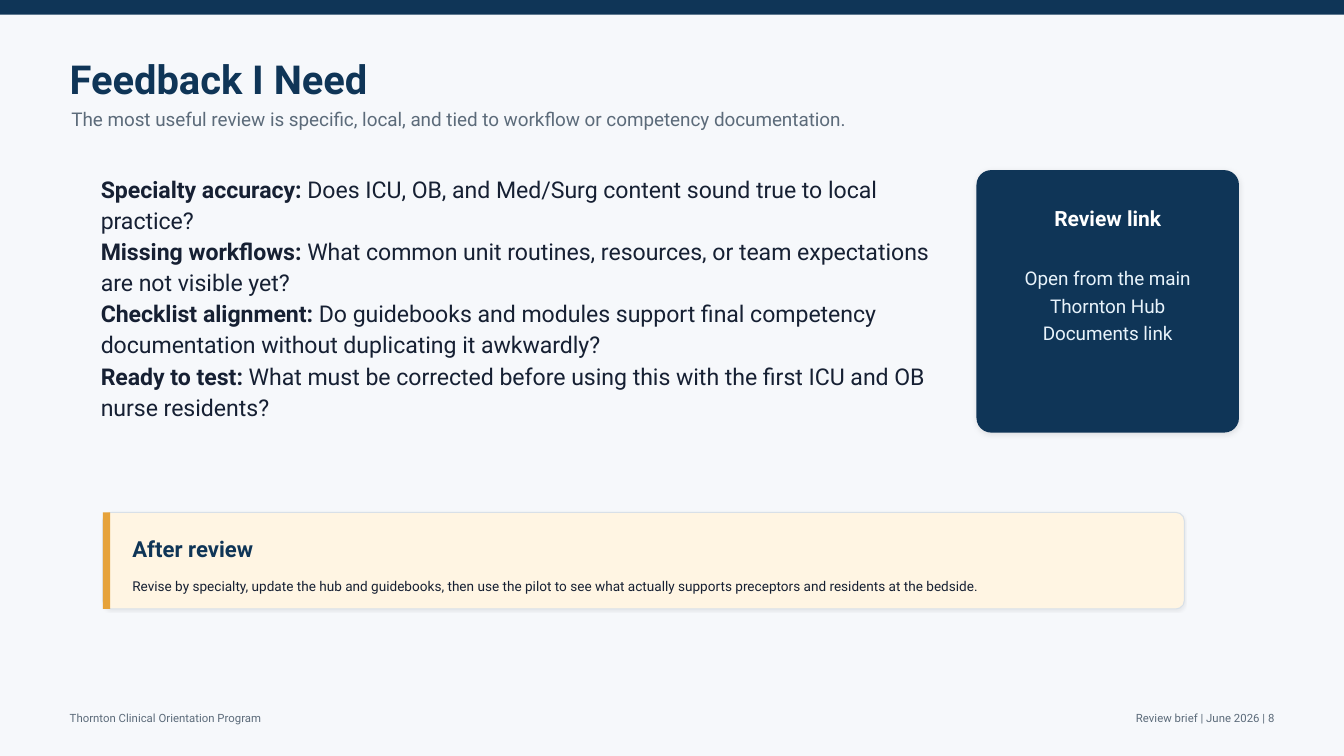
from lxml import etree
from pptx import Presentation
from pptx.dml.color import RGBColor
from pptx.enum.shapes import MSO_SHAPE
from pptx.enum.text import MSO_ANCHOR, PP_ALIGN
from pptx.oxml.ns import qn
from pptx.util import Pt

RECT, ROUND = MSO_SHAPE.RECTANGLE, MSO_SHAPE.ROUNDED_RECTANGLE
LEFT, CENTER, RIGHT = PP_ALIGN.LEFT, PP_ALIGN.CENTER, PP_ALIGN.RIGHT
TOP = MSO_ANCHOR.TOP

FONT = "Roboto"
NAVY = RGBColor(0x0F, 0x35, 0x57)
GRAY = RGBColor(0x5C, 0x6B, 0x7A)
INK = RGBColor(0x16, 0x20, 0x33)
WHITE = RGBColor(0xFF, 0xFF, 0xFF)
ICE = RGBColor(0xE8, 0xF3, 0xFB)
CREAM = RGBColor(0xFF, 0xF5, 0xE3)
AMBER = RGBColor(0xE6, 0xA2, 0x3A)
BORDER = RGBColor(0xD8, 0xE0, 0xE8)
PAPER = RGBColor(0xF6, 0xF8, 0xFB)

# Content
TITLE = "Feedback I Need"
SUBTITLE = ("The most useful review is specific, local, and tied to workflow "
            "or competency documentation.")
QUESTIONS = [
    ("Specialty accuracy: ",
     "Does ICU, OB, and Med/Surg content sound true to local practice?"),
    ("Missing workflows: ",
     "What common unit routines, resources, or team expectations are not visible yet?"),
    ("Checklist alignment: ",
     "Do guidebooks and modules support final competency documentation "
     "without duplicating it awkwardly?"),
    ("Ready to test: ",
     "What must be corrected before using this with the first ICU and OB nurse residents?"),
]
LINK_TITLE = "Review link"
LINK_LINES = ["Open from the main", "Thornton Hub", "Documents link"]
AFTER_TITLE = "After review"
AFTER_TEXT = ("Revise by specialty, update the hub and guidebooks, then use the pilot to see "
              "what actually supports preceptors and residents at the bedside.")
FOOTER_LEFT = "Thornton Clinical Orientation Program"
FOOTER_RIGHT = "Review brief | June 2026 | 8"

# Layout in points
SLIDE_W, SLIDE_H = 960, 540
MARGIN = 46.8
FOOTER_Y, FOOTER_H = 505.5, 13.5
BODY_Y, BODY_H = 121.5, 187.5
LINK_X = 697.5
AFTER_X, AFTER_Y, AFTER_W, AFTER_H = 73.5, 366, 772.5, 69
AFTER_TEXT_X, AFTER_TEXT_W = 91.5, 741

prs = Presentation()
prs.slide_width, prs.slide_height = Pt(SLIDE_W), Pt(SLIDE_H)
slide = prs.slides.add_slide(prs.slide_layouts[6])
slide.background.fill.solid()
slide.background.fill.fore_color.rgb = PAPER


def add_shadow(sp, alpha, blur, dist):
    effects = sp._element.spPr.find(qn("a:effectLst"))
    shadow = etree.SubElement(effects, qn("a:outerShdw"), blurRad=str(Pt(blur)),
                              dist=str(Pt(dist)), dir="5400000", rotWithShape="0")
    color = etree.SubElement(shadow, qn("a:srgbClr"), val="000000")
    etree.SubElement(color, qn("a:alpha"), val=str(alpha * 1000))


def add_box(kind, x, y, w, h, fill, line=None, adj=None, shadow=None):
    sp = slide.shapes.add_shape(kind, Pt(x), Pt(y), Pt(w), Pt(h))
    sp.shadow.inherit = False
    sp.fill.solid()
    sp.fill.fore_color.rgb = fill
    if line is None:
        sp.line.fill.background()
    else:
        sp.line.color.rgb = line
        sp.line.width = Pt(0.75)
    if adj is not None:
        sp.adjustments[0] = adj
    if shadow is not None:
        add_shadow(sp, *shadow)


def add_text(x, y, w, h, paragraphs, size, color, bold=False,
             align=LEFT, spacing=1.08, after=None):
    """Each paragraph is a list of (text, bold) runs or a plain string."""
    tf = slide.shapes.add_textbox(Pt(x), Pt(y), Pt(w), Pt(h)).text_frame
    tf.word_wrap = True
    tf.vertical_anchor = TOP
    tf.margin_left = tf.margin_right = Pt(3)
    tf.margin_top = tf.margin_bottom = Pt(1.5)
    for i, runs in enumerate(paragraphs):
        p = tf.paragraphs[0] if i == 0 else tf.add_paragraph()
        p.alignment, p.line_spacing = align, spacing
        if after is not None:
            p.space_after = Pt(after)
        for text, is_bold in [(runs, bold)] if isinstance(runs, str) else runs:
            r = p.add_run()
            r.text = text
            r.font.name, r.font.size, r.font.bold = FONT, Pt(size), is_bold
            r.font.color.rgb = color


# Header and footer
add_box(RECT, 0, 0, SLIDE_W, 10.5, NAVY)
add_text(MARGIN, 34.5, 645, 40.5, [TITLE], 28.5, NAVY, bold=True)
add_text(48, 74.25, 712.5, 25.5, [SUBTITLE], 13.5, GRAY)
add_text(MARGIN, FOOTER_Y, 270, FOOTER_H, [FOOTER_LEFT], 8.1, GRAY)
add_text(718.5, FOOTER_Y, 195, FOOTER_H, [FOOTER_RIGHT], 8.1, GRAY, align=RIGHT)

# Review questions
questions = [[(label, True), (text, False)] for label, text in QUESTIONS]
add_text(69, BODY_Y, 615, BODY_H, questions, 16.5, INK, spacing=1.12, after=0.1)

# Review link card
add_box(ROUND, LINK_X, BODY_Y, BODY_H, BODY_H, NAVY, adj=0.056, shadow=(10, 4.5, 1.5))
add_text(718.5, 144, 145.5, 22.5, [LINK_TITLE], 15, WHITE, bold=True, align=CENTER)
add_text(714, 186, 154.5, 72, LINK_LINES, 13.5, ICE, align=CENTER, spacing=1.2)

# After review callout
add_box(ROUND, AFTER_X, AFTER_Y, AFTER_W, AFTER_H, CREAM, BORDER, 0.087, (6, 1.5, 0.8))
add_box(RECT, AFTER_X, AFTER_Y, 5.25, AFTER_H, AMBER)
add_text(AFTER_TEXT_X, 379.5, AFTER_TEXT_W, 25.5, [AFTER_TITLE], 15.8, NAVY, bold=True)
add_text(AFTER_TEXT_X, 409.5, AFTER_TEXT_W, 16.5, [AFTER_TEXT], 9.7, INK, spacing=1.16)

prs.save("out.pptx")
